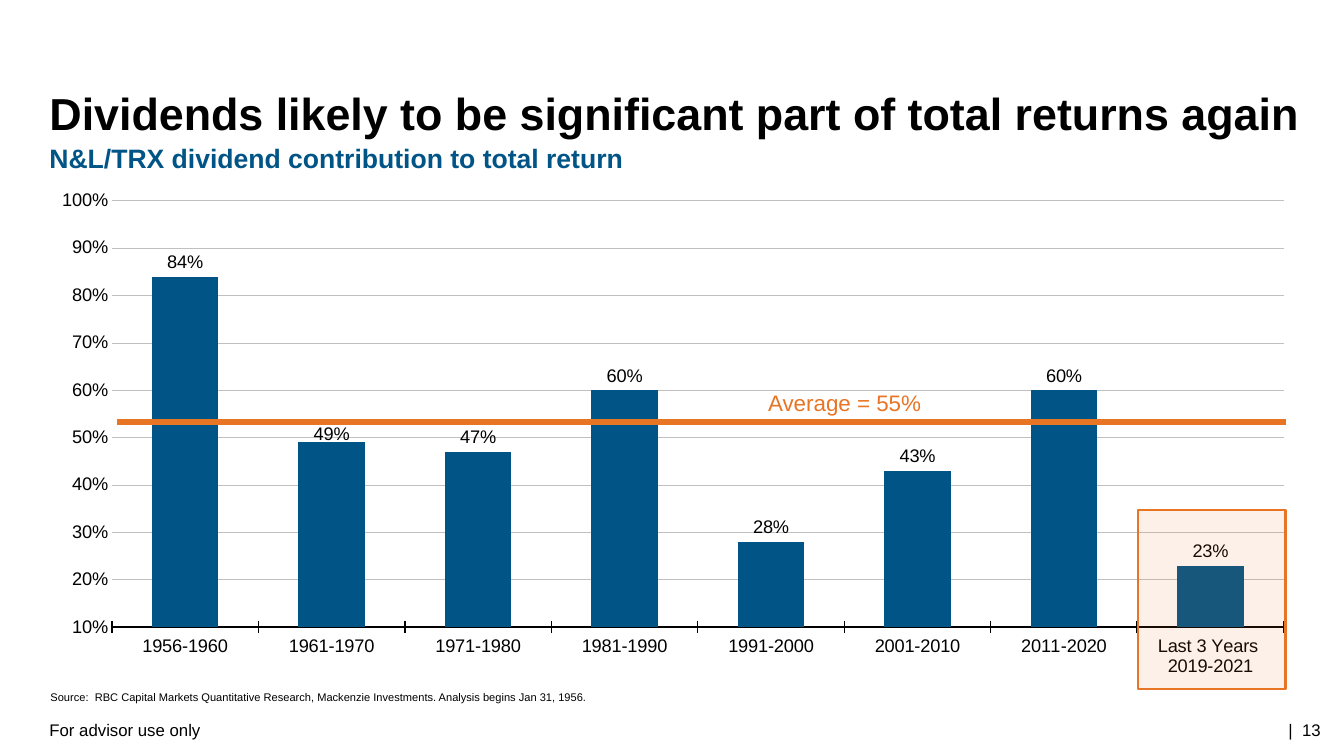
"""Build the dividend contribution slide with its column chart and average line."""
from dataclasses import dataclass

from lxml import etree
from pptx import Presentation
from pptx import util as u
from pptx.chart.data import CategoryChartData
from pptx.dml.color import RGBColor
from pptx.enum import chart as ch, shapes, text
from pptx.oxml.ns import qn

PX = 9144


@dataclass(frozen=True)
class Theme:
    """Colours, font and type sizes."""
    face: str = "Arial"
    ink: str = "000000"
    blue: str = "005486"
    orange: str = "E87524"
    grid: str = "C0C0C0"
    head: float = 32
    sub: float = 19
    tag: float = 16
    axis: float = 13
    foot: float = 12
    note: float = 7.9


def rgb(hue):
    """Turn a hex string into a colour."""
    return RGBColor.from_string(hue)


def style(font, theme, size, hue, bold=False):
    """Apply face, size, colour and weight to a font."""
    font.name, font.size, font.bold = theme.face, u.Pt(size), bold
    font.color.rgb = rgb(hue)


def write(shape, words, theme, *, size, hue=None, bold=False, wrap=True, pad=(0, 0, 0, 0),
          align=text.PP_ALIGN.LEFT, anchor=text.MSO_ANCHOR.TOP, lead=None, after=None):
    """Fill a shape with one formatted paragraph."""
    frame = shape.text_frame
    frame.auto_size = text.MSO_AUTO_SIZE.NONE
    frame.word_wrap, frame.vertical_anchor = wrap, anchor
    (frame.margin_left, frame.margin_top,
     frame.margin_right, frame.margin_bottom) = [n * PX for n in pad]
    para = frame.paragraphs[0]
    para.alignment = align
    if lead:
        para.line_spacing = lead
    if after:
        para.space_after = u.Pt(after)
    run = para.add_run()
    run.text = words
    style(run.font, theme, size, hue or theme.ink, bold)


def layout(parent, index, **parts):
    """Insert a manual chart layout into an element."""
    old = parent.find(qn("c:layout"))
    if old is not None:
        parent.remove(old)
    outer = etree.Element(qn("c:layout"))
    inner = etree.SubElement(outer, qn("c:manualLayout"))
    for key, val in parts.items():
        etree.SubElement(inner, qn(f"c:{key}")).set("val", str(val))
    parent.insert(index, outer)


class Board:
    """Hold the theme and the current slide, and draw each kind of element."""

    def __init__(self, deck, theme):
        """Add a title-only slide."""
        self.theme = theme
        self.slide = deck.slides.add_slide(deck.slide_layouts[5])

    def title(self, words, box):
        """Place and fill the title placeholder."""
        shape = self.slide.shapes.title
        shape.left, shape.top, shape.width, shape.height = [n * PX for n in box]
        write(shape, words, self.theme, size=self.theme.head, bold=True)

    def label(self, words, box, **form):
        """Add a text box."""
        shape = self.slide.shapes.add_textbox(*[n * PX for n in box])
        write(shape, words, self.theme, **form)

    def line(self, start, end, hue, width):
        """Add a straight line."""
        ends = [n * PX for n in start + end]
        link = self.slide.shapes.add_connector(shapes.MSO_CONNECTOR.STRAIGHT, *ends)
        link.line.color.rgb, link.line.width = rgb(hue), u.Pt(width)
        etree.SubElement(link._element.spPr, qn("a:effectLst"))

    def frame(self, box, hue, width, alpha):
        """Add a tinted rectangle with an outline."""
        rect = self.slide.shapes.add_shape(shapes.MSO_SHAPE.RECTANGLE, *[n * PX for n in box])
        rect.shadow.inherit = False
        rect.fill.solid()
        rect.fill.fore_color.rgb = rgb(hue)
        tint = rect._element.spPr.find(qn("a:solidFill"))[0]
        etree.SubElement(tint, qn("a:alpha")).set("val", str(alpha * 1000))
        rect.line.color.rgb, rect.line.width = rgb(hue), u.Pt(width)

    def columns(self, data, box):
        """Add the column chart of percentages."""
        theme = self.theme
        feed = CategoryChartData(number_format="0%")
        feed.categories = list(data)
        feed.add_series("Series 1", list(data.values()))
        chart = self.slide.shapes.add_chart(
            ch.XL_CHART_TYPE.COLUMN_CLUSTERED, *[n * PX for n in box], feed).chart
        chart.has_legend = chart.has_title = False
        style(chart.font, theme, theme.axis, theme.ink)
        layout(chart._chartSpace.chart.plotArea, 0, layoutTarget="inner", xMode="edge",
               yMode="edge", x=0.064, y=0.037, w=0.908, h=0.86)
        self.axes(chart)
        plot = chart.plots[0]
        plot.gap_width, plot.overlap, plot.vary_by_categories = 120, -27, False
        bars = plot.series[0]
        bars.format.fill.solid()
        bars.format.fill.fore_color.rgb = rgb(theme.blue)
        tags = bars.data_labels
        tags.show_value = True
        tags.number_format, tags.number_format_is_linked = "0%", False
        tags.position = ch.XL_LABEL_POSITION.OUTSIDE_END
        style(tags.font, theme, theme.axis, theme.ink)
        self.nudge(bars, 1, 0.012)

    def nudge(self, bars, spot, drop):
        """Lower one data label by a share of the chart height."""
        tag = bars.points[spot].data_label
        style(tag.font, self.theme, self.theme.axis, self.theme.ink)
        tag.position = ch.XL_LABEL_POSITION.OUTSIDE_END
        node = bars._element.find(f"{qn('c:dLbls')}/{qn('c:dLbl')}")
        layout(node, 1, x=0, y=drop)
        form = etree.Element(qn("c:numFmt"), formatCode="0%", sourceLinked="0")
        node.insert(2, form)

    def axes(self, chart):
        """Format both axes and the grid."""
        theme = self.theme
        cat, val = chart.category_axis, chart.value_axis
        for axis in (cat, val):
            style(axis.tick_labels.font, theme, theme.axis, theme.ink)
            axis.minor_tick_mark = ch.XL_TICK_MARK.NONE
        cat.major_tick_mark = ch.XL_TICK_MARK.CROSS
        cat.tick_label_position = ch.XL_TICK_LABEL_POSITION.LOW
        cat.format.line.color.rgb, cat.format.line.width = rgb(theme.ink), u.Pt(1)
        val.minimum_scale, val.maximum_scale, val.major_unit = 0.1, 1, 0.1
        val.major_tick_mark = ch.XL_TICK_MARK.NONE
        val.tick_labels.number_format = "0%"
        val.tick_labels.number_format_is_linked = False
        val.format.line.fill.background()
        grid = val.major_gridlines.format.line
        grid.color.rgb, grid.width = rgb(theme.grid), u.Pt(0.5)


def main():
    """Compose and save the slide."""
    theme = Theme()
    deck = Presentation()
    deck.slide_width, deck.slide_height = 1333 * PX, 750 * PX
    board = Board(deck, theme)
    shares = {"1956-1960": 0.84, "1961-1970": 0.49, "1971-1980": 0.47, "1981-1990": 0.6,
              "1991-2000": 0.28, "2001-2010": 0.43, "2011-2020": 0.6,
              "Last 3 Years \n2019-2021": 0.23}
    board.label("|  13", (1272, 714, 50, 20), size=theme.foot, pad=(0, 0, 12, 0),
                align=text.PP_ALIGN.RIGHT, anchor=text.MSO_ANCHOR.MIDDLE)
    board.label("For advisor use only", (49, 714, 151, 20), size=theme.foot, wrap=False)
    board.columns(shares, (29, 181, 1280, 492))
    board.line((116, 419), (1275, 419), theme.orange, 4.5)
    board.label("Average = 55%", (752, 381, 197, 37), size=theme.tag, hue=theme.orange,
                pad=(10, 5, 10, 5))
    board.title("Dividends likely to be significant part of total returns again",
                (49, 85, 1272, 90))
    board.label("Source:  RBC Capital Markets Quantitative Research, Mackenzie Investments. "
                "Analysis begins Jan 31, 1956.", (50, 645, 1221, 53), size=theme.note,
                anchor=text.MSO_ANCHOR.BOTTOM)
    board.label("N&L/TRX dividend contribution to total return", (49, 143, 1226, 48),
                size=theme.sub, hue=theme.blue, bold=True, lead=0.95, after=6)
    board.frame((1129, 506, 146, 178), theme.orange, 1.5, 10)
    deck.save("out.pptx")


if __name__ == "__main__":
    main()
